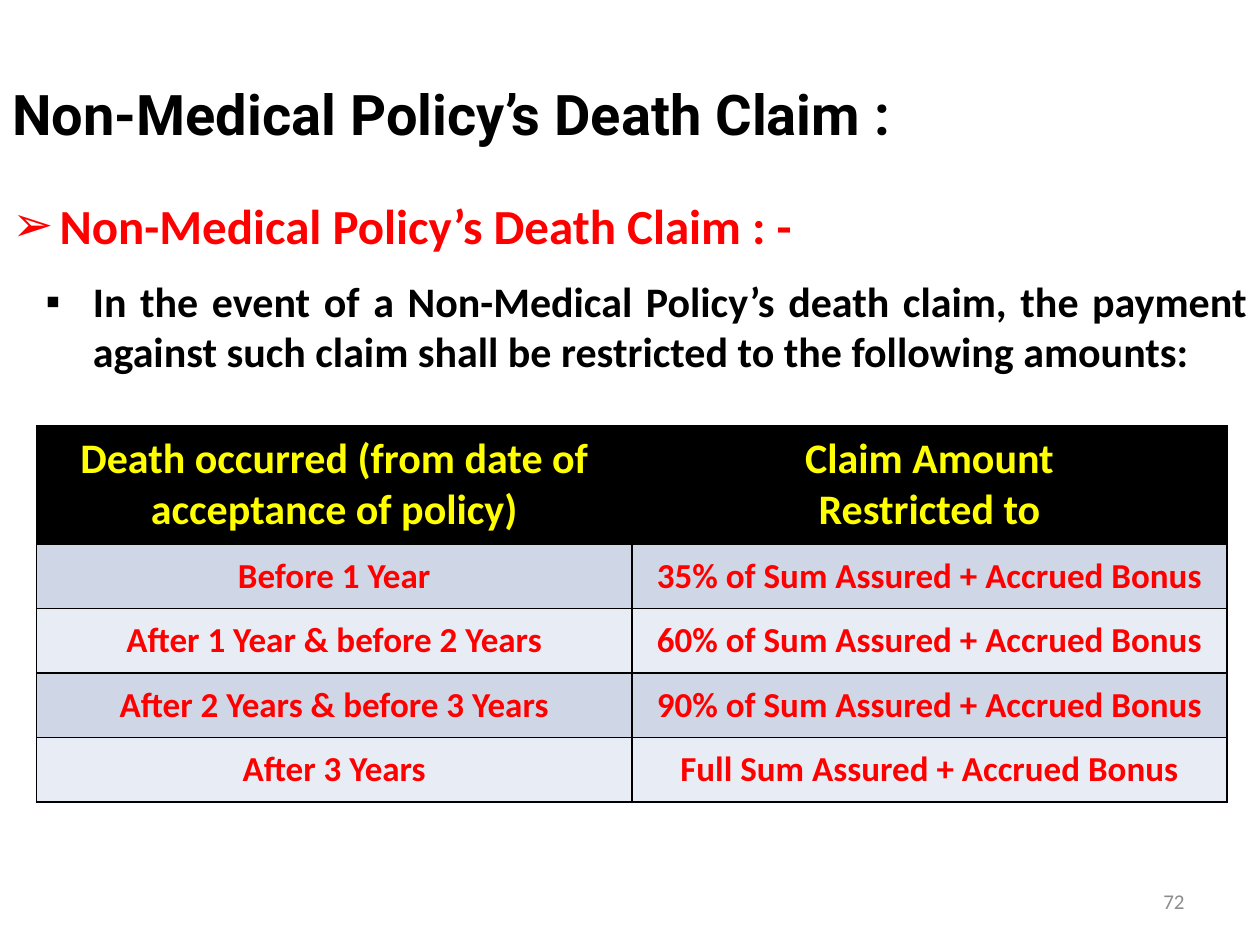
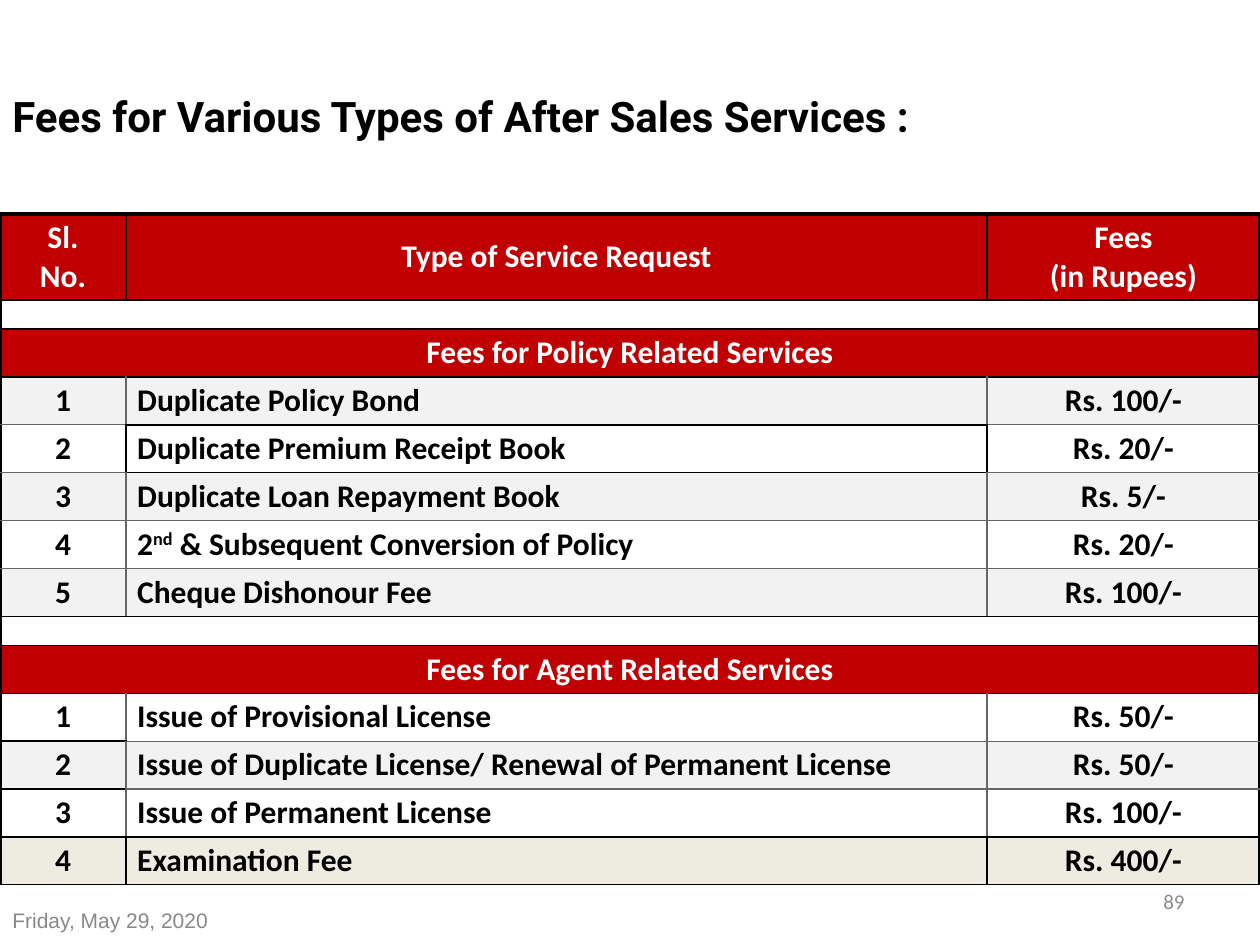
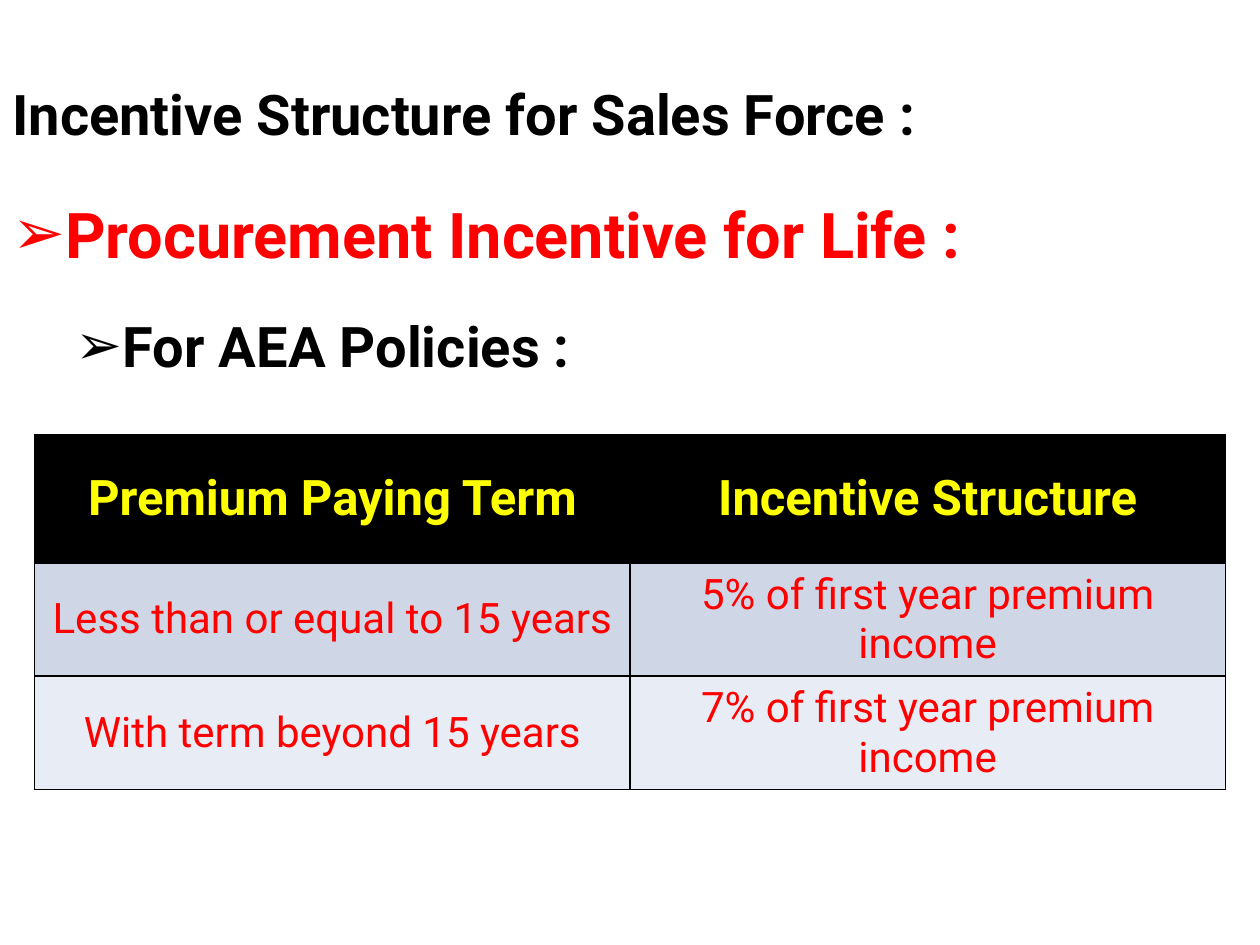
from dataclasses import dataclass
from typing import Sequence

from lxml import etree
from pptx import Presentation, util as u
from pptx.dml.color import RGBColor
from pptx.enum import text as t
from pptx.oxml import ns

Pt = u.Pt
LEFT, CENTER, RIGHT, JUSTIFY = (
    t.PP_ALIGN.LEFT, t.PP_ALIGN.CENTER, t.PP_ALIGN.RIGHT, t.PP_ALIGN.JUSTIFY)
MIDDLE, TOP = t.MSO_ANCHOR.MIDDLE, t.MSO_ANCHOR.TOP
COLORS = {
    "black": "000000", "white": "FFFFFF", "red": "FF0000", "yellow": "FFFF00",
    "crimson": "C00000", "band": "CFD7E7", "pale": "E8ECF4", "grey": "F2F2F2",
    "cream": "EEECE1", "rule": "666666", "number": "8C8C8C", "date": "888888",
}
ARROW, SQUARE = "➢", "▪"


@dataclass(frozen=True)
class Line:
    color: str
    width: float


@dataclass(frozen=True)
class Point:
    text: str
    size: float
    color: str
    bullet: str
    indent: float
    hanging: float
    before: float = 0


@dataclass(frozen=True)
class Borders:
    left: Line
    right: Line
    top: Line
    bottom: Line


@dataclass(frozen=True)
class TermTable:
    left: float
    top: float
    font: str
    header_size: float
    body_size: float
    body_bold: bool
    header_height: float
    row_height: float
    rows: Sequence[Sequence[str]]


SOLID, THIN, OUTER = Line("black", 1), Line("rule", 0.75), Line("black", 2.25)


@dataclass(frozen=True)
class FeeRow:
    cells: Sequence[str]
    fill: str
    vertical: Line = THIN
    dark_bottoms: Sequence[int] = ()
    color: str = "black"
    height: float = 27.36


def section(text: str) -> FeeRow:
    return FeeRow((text,), "crimson", OUTER, (0, 1, 2), "white")


SPACER = FeeRow(("",), "white", OUTER, (0, 1, 2), height=16.6)
FEE_ROWS = (
    FeeRow(("Sl.\nNo.", "Type of Service Request", "Fees\n(in Rupees)"),
           "crimson", SOLID, (0, 1, 2), "white", 49.1),
    SPACER,
    section("Fees for Policy Related Services"),
    FeeRow(("1", "Duplicate Policy Bond", "Rs. 100/-"), "grey", THIN, (1,)),
    FeeRow(("2", "Duplicate Premium Receipt Book", "Rs. 20/-"), "white", SOLID, (1,)),
    FeeRow(("3", "Duplicate Loan Repayment Book", "Rs. 5/-"), "grey"),
    FeeRow(("4", "2^nd^ & Subsequent Conversion of Policy", "Rs. 20/-"), "white"),
    FeeRow(("5", "Cheque Dishonour Fee", "Rs. 100/-"), "grey", THIN, (0, 1, 2)),
    SPACER,
    section("Fees for Agent Related Services"),
    FeeRow(("1", "Issue of Provisional License", "Rs. 50/-"), "white", THIN, (0,)),
    FeeRow(("2", "Issue of Duplicate License/ Renewal of Permanent License", "Rs. 50/-"),
           "grey", THIN, (0,)),
    FeeRow(("3", "Issue of Permanent License", "Rs. 100/-"), "white", THIN, (0, 1, 2)),
    FeeRow(("4", "Examination Fee", "Rs. 400/-"), "cream", SOLID, (0, 1, 2)),
)
FEE_COLUMNS = (72, 492, 156)

DEATH_CLAIMS = TermTable(20.9, 243.4, "Calibri", 24, 20, True, 67.6, 36.8, (
    ("Death occurred (from date of acceptance of policy)", "Claim Amount\nRestricted to"),
    ("Before 1 Year", "35% of Sum Assured + Accrued Bonus"),
    ("After 1 Year & before 2 Years", "60% of Sum Assured + Accrued Bonus"),
    ("After 2 Years & before 3 Years", "90% of Sum Assured + Accrued Bonus"),
    ("After 3 Years", "Full Sum Assured + Accrued Bonus"),
))
INCENTIVES = TermTable(19.8, 248.2, "Roboto", 28, 24, False, 73.4, 64.8, (
    ("Premium Paying Term", "Incentive Structure"),
    ("Less than or equal to 15 years", "5% of first year premium income"),
    ("With term beyond 15 years", "7% of first year premium income"),
))


def rgb(name: str) -> RGBColor:
    return RGBColor.from_string(COLORS[name])


def write(paragraph, text: str, *, size: float, font: str = "Calibri",
          color: str = "black", bold: bool = True, align=LEFT) -> None:
    paragraph.alignment = align
    if not text:
        etree.SubElement(paragraph._p, ns.qn("a:endParaRPr"), sz=str(int(size * 100)))
    for index, part in enumerate(text.split("^") if text else ()):
        run = paragraph.add_run()
        run.text = part
        run.font.size, run.font.name, run.font.bold = Pt(size), font, bold
        run.font.color.rgb = rgb(color)
        if index % 2:
            run._r.get_or_add_rPr().set("baseline", "30000")


def write_lines(frame, text: str, **style) -> None:
    for index, line in enumerate(text.split("\n")):
        write(frame.add_paragraph() if index else frame.paragraphs[0], line, **style)


def add_frame(slide, left: float, top: float, width: float, height: float, anchor=TOP):
    frame = slide.shapes.add_textbox(Pt(left), Pt(top), Pt(width), Pt(height)).text_frame
    frame.word_wrap = True
    frame.vertical_anchor = anchor
    return frame


def add_title(slide, text: str, top: float, width: float, size: float = 32) -> None:
    write_lines(add_frame(slide, 0, top, width, size * 1.2 + 7.2), text,
                size=size, font="Roboto")


def add_page_number(slide, number: str) -> None:
    write_lines(add_frame(slide, 516, 500.5, 168, 28.8, MIDDLE), number,
                size=12, color="number", bold=False, align=RIGHT)


def add_points(slide, points: Sequence[Point], font: str) -> None:
    frame = add_frame(slide, 0, 108, 720, 432)
    for index, point in enumerate(points):
        paragraph = frame.add_paragraph() if index else frame.paragraphs[0]
        properties = paragraph._p.get_or_add_pPr()
        properties.set("marL", str(Pt(point.indent)))
        properties.set("indent", str(-Pt(point.hanging)))
        tint = etree.SubElement(properties, ns.qn("a:buClr"))
        etree.SubElement(tint, ns.qn("a:srgbClr"), val=COLORS[point.color])
        etree.SubElement(properties, ns.qn("a:buFont"), typeface="Arial")
        etree.SubElement(properties, ns.qn("a:buChar"), char=point.bullet)
        if index:
            paragraph.space_before = Pt(point.before)
        write(paragraph, point.text, size=point.size, font=font,
              color=point.color, align=JUSTIFY)


def style_cell(cell, fill: str, borders: Borders) -> None:
    properties = cell._tc.get_or_add_tcPr()
    edges = (("L", borders.left), ("R", borders.right),
             ("T", borders.top), ("B", borders.bottom))
    for side, line in edges:
        edge = etree.SubElement(properties, ns.qn(f"a:ln{side}"), w=str(Pt(line.width)))
        paint = etree.SubElement(edge, ns.qn("a:solidFill"))
        etree.SubElement(paint, ns.qn("a:srgbClr"), val=COLORS[line.color])
    cell.fill.solid()
    cell.fill.fore_color.rgb = rgb(fill)
    cell.vertical_anchor = MIDDLE


def add_grid(slide, left: float, top: float, widths: Sequence[float],
             heights: Sequence[float]):
    grid = slide.shapes.add_table(len(heights), len(widths), Pt(left), Pt(top),
                                  Pt(sum(widths)), Pt(sum(heights))).table
    for column, width in zip(grid.columns, widths):
        column.width = Pt(width)
    for row, height in zip(grid.rows, heights):
        row.height = Pt(height)
    return grid


def add_term_table(slide, terms: TermTable) -> None:
    heights = [terms.header_height] + [terms.row_height] * (len(terms.rows) - 1)
    grid = add_grid(slide, terms.left, terms.top, (340.2, 340.2), heights)
    for row, texts in enumerate(terms.rows):
        header = row == 0
        fill = "black" if header else ("pale", "band")[row % 2]
        for column, text in enumerate(texts):
            cell = grid.cell(row, column)
            style_cell(cell, fill, Borders(SOLID, SOLID, SOLID, SOLID))
            write_lines(cell.text_frame, text, font=terms.font, align=CENTER,
                        size=terms.header_size if header else terms.body_size,
                        color="yellow" if header else "red",
                        bold=header or terms.body_bold)


def add_fee_table(slide) -> None:
    grid = add_grid(slide, 0, 122.4, FEE_COLUMNS, [fee.height for fee in FEE_ROWS])
    last = len(FEE_COLUMNS) - 1
    tops = [OUTER] * len(FEE_COLUMNS)
    for row, fee in enumerate(FEE_ROWS):
        bottoms = [SOLID if column in fee.dark_bottoms else THIN
                   for column in range(len(FEE_COLUMNS))]
        for column in range(len(FEE_COLUMNS)):
            style_cell(grid.cell(row, column), fee.fill, Borders(
                fee.vertical if column else OUTER,
                fee.vertical if column < last else OUTER,
                tops[column], bottoms[column]))
        tops = bottoms
        if len(fee.cells) == 1:
            grid.cell(row, 0).merge(grid.cell(row, last))
        for column, text in enumerate(fee.cells):
            service = column == 1 and row > 0
            cell = grid.cell(row, column)
            cell.margin_left = Pt(6.4 if service else 2.4)
            cell.margin_right = Pt(2.4)
            cell.margin_top = cell.margin_bottom = Pt(2.7)
            write_lines(cell.text_frame, text, size=18 if text else 9, color=fee.color,
                        align=LEFT if service else CENTER)


def main() -> None:
    deck = Presentation()
    deck.slide_width, deck.slide_height = Pt(720), Pt(540)
    claim, fees, incentive = (
        deck.slides.add_slide(deck.slide_layouts[6]) for _ in range(3))

    add_points(claim, (
        Point("Non-Medical Policy’s Death Claim : -", 28, "red", ARROW, 27, 27),
        Point("In the event of a Non-Medical Policy’s death claim, the payment against "
              "such claim shall be restricted to the following amounts:",
              24, "black", SQUARE, 46, 27, 12.2),
    ), "Calibri")
    add_title(claim, "Non-Medical Policy’s Death Claim :", 41.8, 535)
    add_term_table(claim, DEATH_CLAIMS)
    add_page_number(claim, "72")

    write_lines(add_frame(fees, 0, 511.2, 168, 28.8, MIDDLE), "Friday, May 29, 2020",
                size=12, font="Arial", color="date", bold=False)
    add_title(fees, "Fees for Various Types of After Sales Services :", 48.2, 550, 24)
    add_fee_table(fees)
    add_page_number(fees, "89")

    add_title(incentive, "Incentive Structure for Sales Force :", 41.8, 562)
    add_points(incentive, (
        Point("Procurement Incentive for Life :", 36, "red", ARROW, 27, 27),
        Point("For AEA Policies :", 32, "black", ARROW, 63, 27, 23.4),
    ), "Roboto")
    add_term_table(incentive, INCENTIVES)

    deck.save("out.pptx")


if __name__ == "__main__":
    main()
